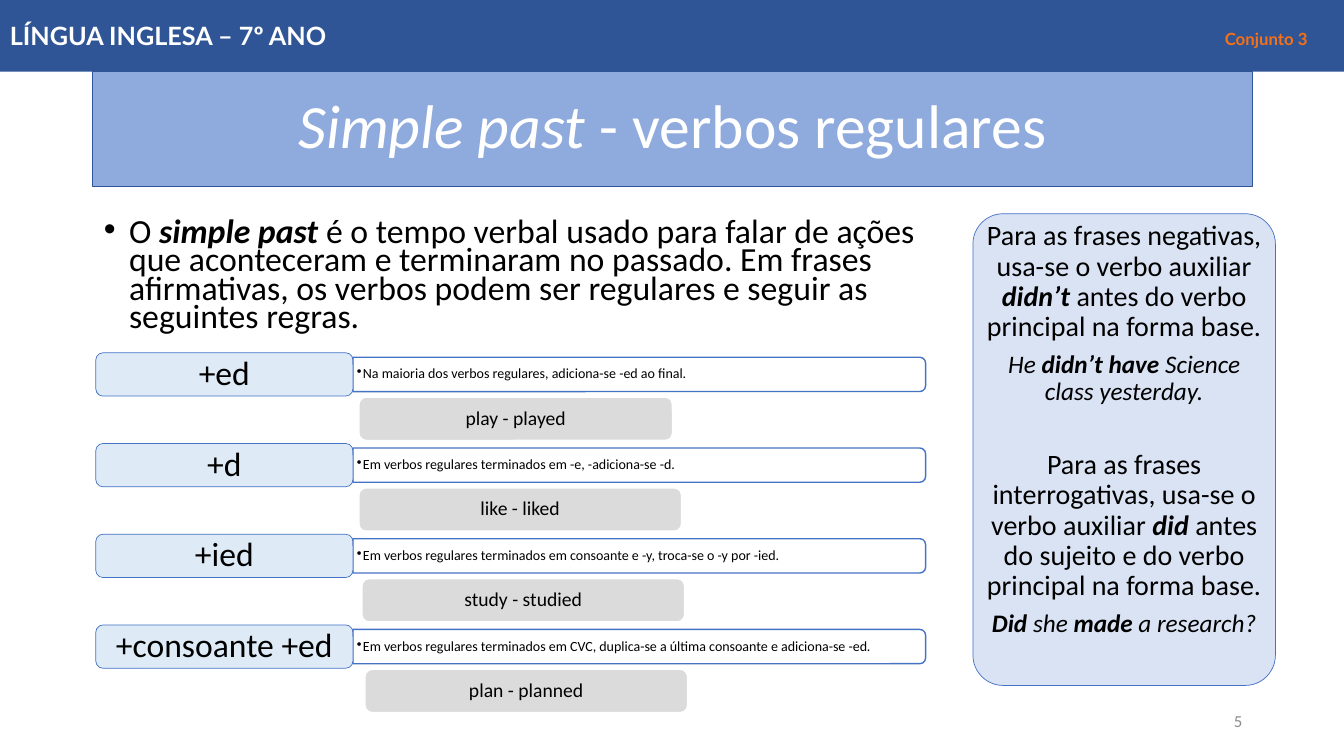
import pptx
import pptx.util
import pptx.dml.color
import pptx.enum.shapes
import pptx.enum.text
import pptx.oxml.ns
from lxml import etree

Inches = pptx.util.Inches
Pt = pptx.util.Pt
Kind = pptx.enum.shapes.MSO_SHAPE
Align = pptx.enum.text.PP_ALIGN
Anchor = pptx.enum.text.MSO_ANCHOR

COLORS = {
    "navy": "2F5597", "title": "8FAADC", "line": "4472C4", "tag": "DEEBF7",
    "panel": "DAE3F3", "example": "DBDBDB", "orange": "F47116",
    "number": "8C8C8C", "white": "FFFFFF", "black": "000000",
}

# Ending, rule, example, example left and width
RULES = [
    ("+ed", [("Na maioria dos verbos regulares, adiciona-se -ed ao final.", "")],
     "play - played", 3.56, 3.11),
    ("+d", [("Em verbos regulares terminados em -e, -adiciona-se -d.", "")],
     "like - liked", 3.56, 3.2),
    ("+ied", [("Em verbos regulares terminados em consoante e -y, "
               "troca-se o -y por -ied.", "")],
     "study - studied", 3.59, 3.2),
    ("+consoante +ed", [("Em verbos regulares terminados em CVC, duplica-se a "
                         "última consoante e adiciona-se -ed", ""), (".", "i")],
     "plan - planned", 3.62, 3.2),
]


def rgb(name):
    return pptx.dml.color.RGBColor.from_string(COLORS[name])


def write(para, spans, size=18, color="black", font="Calibri", align=Align.LEFT,
          spacing=0.9, before=0, after=0, indent=None):
    """Fill a paragraph with (text, style) spans; style holds b and/or i."""
    para.alignment = align
    para.line_spacing = spacing
    para.space_before, para.space_after = Pt(before), Pt(after)
    for text, style in spans:
        span = para.add_run()
        span.text = text
        span.font.name, span.font.size = font, Pt(size)
        span.font.bold, span.font.italic = "b" in style, "i" in style
        span.font.color.rgb = rgb(color)
    if indent:
        props = para._p.get_or_add_pPr()
        props.set("marL", str(Inches(indent)))
        props.set("indent", str(-Inches(indent)))
        bullet = etree.SubElement(props, pptx.oxml.ns.qn("a:buChar"))
        bullet.set("char", "•")


def set_frame(shape, anchor=Anchor.MIDDLE, side=0.1, edge=0.05):
    frame = shape.text_frame
    frame.word_wrap = True
    frame.auto_size = pptx.enum.text.MSO_AUTO_SIZE.NONE
    frame.vertical_anchor = anchor
    frame.margin_left = frame.margin_right = Inches(side)
    frame.margin_top = frame.margin_bottom = Inches(edge)
    return frame


def place(shape, box):
    shape.left, shape.top, shape.width, shape.height = map(Inches, box)


def paint(shape, fill, line=None, weight=1):
    shape.fill.solid()
    shape.fill.fore_color.rgb = rgb(fill)
    if line:
        shape.line.color.rgb = rgb(line)
        shape.line.width = Pt(weight)
    else:
        shape.line.fill.background()


def add_box(page, kind, box, fill, line=None, weight=1):
    shape = page.shapes.add_shape(kind, *map(Inches, box))
    shape.shadow.inherit = False
    paint(shape, fill, line, weight)
    return shape


def add_header(page, box):
    shape = add_box(page, Kind.RECTANGLE, box, "navy")
    para = set_frame(shape).paragraphs[0]
    write(para, [("LÍNGUA INGLESA – 7º ANO\t", "b")], 18, "white", "Lato", spacing=1)
    write(para, [("Conjunto 3", "b")], 12, "orange", "Lato", spacing=1)
    tabs = etree.SubElement(para._p.get_or_add_pPr(), pptx.oxml.ns.qn("a:tabLst"))
    stop = etree.SubElement(tabs, pptx.oxml.ns.qn("a:tab"))
    stop.set("pos", str(Inches(12.05)))
    stop.set("algn", "l")


def add_title(page, box):
    title = page.shapes.title
    place(title, box)
    paint(title, "title", "navy")
    write(set_frame(title).paragraphs[0],
          [("Simple past ", "i"), ("- verbos regulares", "")],
          44, "white", align=Align.CENTER)


def add_intro(page, box):
    body = page.placeholders[1]
    place(body, box)
    write(set_frame(body, Anchor.TOP).paragraphs[0],
          [("O ", ""), ("simple past", "bi"),
           (" é o tempo verbal usado para falar de ações que aconteceram e "
            "terminaram no passado. Em frases afirmativas, os verbos podem ser "
            "regulares e seguir as seguintes regras.", "")],
          24.1, spacing=0.7, before=10, indent=0.25)


def add_rule(page, box, ending, rule, example, example_left, example_width):
    left, top, width, height = box
    tag_width, bar_height = 2.55, 0.34
    bar_left, bar_width = left + tag_width, width - tag_width
    middle = top + height / 2

    # Rule bar: a quarter turn puts its rounded corners on the right
    add_box(page, Kind.ROUND_2_SAME_RECTANGLE,
            (bar_left + (bar_width - bar_height) / 2, middle - bar_width / 2,
             bar_height, bar_width), "white", "line").rotation = 90
    label = page.shapes.add_textbox(*map(
        Inches, (bar_left, middle - bar_height / 2, bar_width, bar_height)))
    write(set_frame(label, side=0.04, edge=0.02).paragraphs[0], rule, 10, indent=0.06)

    # Ending and example
    tag = add_box(page, Kind.ROUNDED_RECTANGLE, (left, top, tag_width, height),
                  "tag", "line", 0.5)
    write(set_frame(tag).paragraphs[0], [(ending, "")], 24, align=Align.CENTER)
    sample = add_box(page, Kind.ROUNDED_RECTANGLE,
                     (example_left, top + 0.44, example_width, height),
                     "example", "white")
    write(set_frame(sample).paragraphs[0], [(example, "")], 14, align=Align.CENTER)


def add_rules(page, box):
    left, top, width, pitch = box
    for index, rule in enumerate(RULES):
        add_rule(page, (left, top + index * pitch, width, 0.43), *rule)


def add_side_panel(page, box):
    panel = add_box(page, Kind.ROUNDED_RECTANGLE, box, "panel", "line", 0.5)
    panel.adjustments[0] = 0.1
    label = page.shapes.add_textbox(*map(Inches, box))
    frame = set_frame(label, Anchor.TOP, 0.08, 0.08)
    notes = [
        (20, 0, [("Para as frases negativas, usa-se o verbo auxiliar ", ""),
                 ("didn’t", "bi"), (" antes do verbo principal na forma base.", "")]),
        (18, 0, [("He ", "i"), ("didn’t have", "bi"),
                 (" Science class yesterday.", "i")]),
        (20, 25, [("Para as frases interrogativas, usa-se o verbo auxiliar ", ""),
                  ("did", "bi"),
                  (" antes do sujeito e do verbo principal na forma base.", "")]),
        (18, 0, [("Did ", "bi"), ("she ", "i"), ("made", "bi"),
                 (" a research?", "i")]),
    ]
    for index, (size, before, spans) in enumerate(notes):
        para = frame.add_paragraph() if index else frame.paragraphs[0]
        write(para, spans, size, align=Align.CENTER, before=before, after=6.5)


def add_page_number(page, box):
    label = page.shapes.add_textbox(*map(Inches, box))
    write(set_frame(label).paragraphs[0], [("5", "")], 12, "number",
          align=Align.RIGHT, spacing=1)


def main():
    deck = pptx.Presentation()
    deck.slide_width, deck.slide_height = Inches(13.33), Inches(7.5)
    page = deck.slides.add_slide(deck.slide_layouts[1])
    add_title(page, (0.92, 0.71, 11.5, 1.14))
    add_intro(page, (0.93, 2.14, 8.39, 1.26))
    add_page_number(page, (9.42, 6.95, 3, 0.4))
    add_header(page, (0, 0, 13.33, 0.71))
    add_rules(page, (0.95, 3.5, 8.23, 0.9))
    add_side_panel(page, (9.65, 2.12, 3, 4.68))
    deck.save("out.pptx")


if __name__ == "__main__":
    main()
